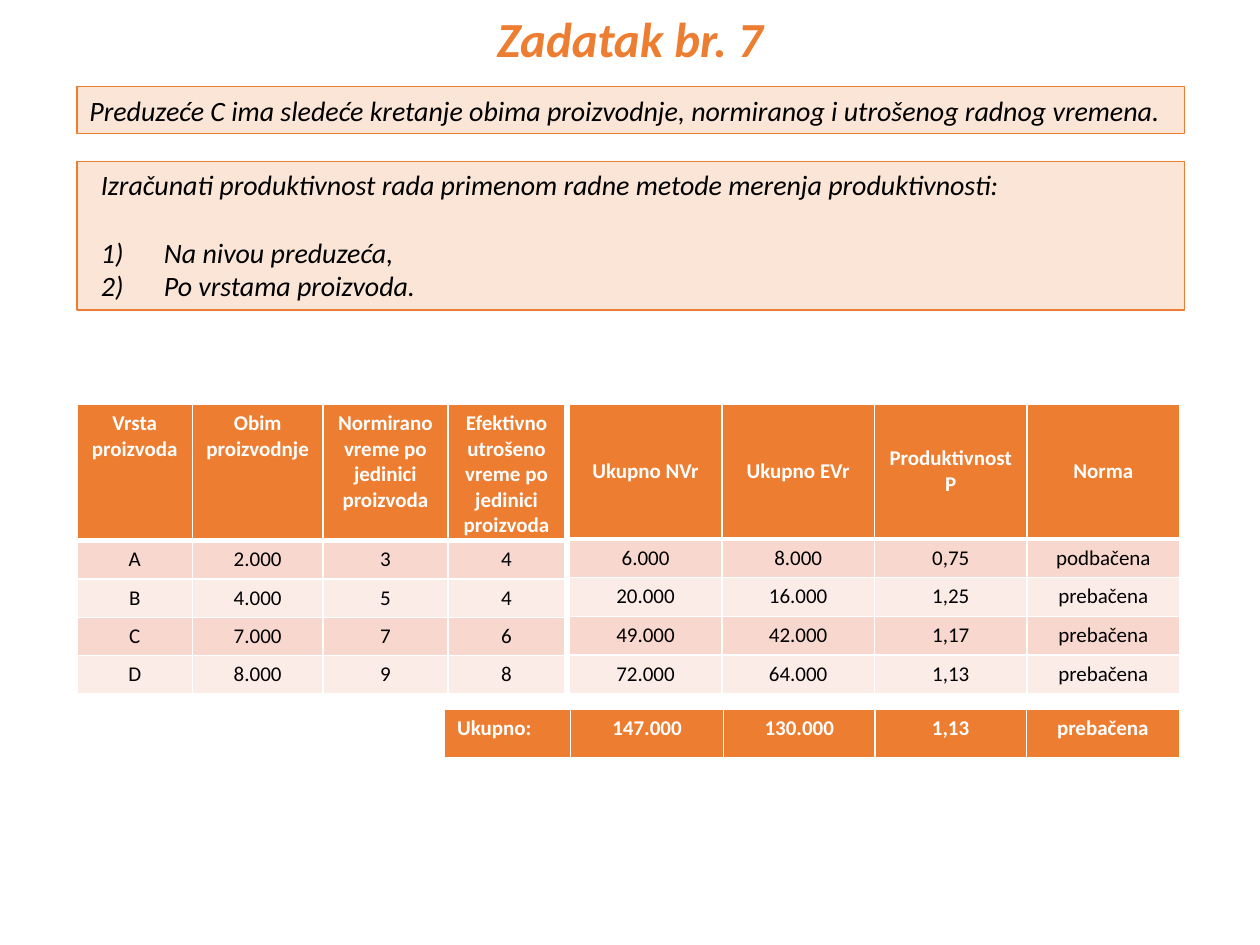
"""Build the productivity exercise slide: task text, data tables and totals."""
import pptx
import pptx.dml.color
import pptx.enum.text
import pptx.oxml.ns
import pptx.util
from lxml import etree

Pt = pptx.util.Pt
ALIGN = pptx.enum.text.PP_ALIGN
ANCHOR = pptx.enum.text.MSO_ANCHOR
RGB = pptx.dml.color.RGBColor
ORANGE = RGB(0xED, 0x7D, 0x31)
PEACH = RGB(0xFB, 0xE5, 0xD6)
BANDS = RGB(0xF8, 0xD7, 0xCE), RGB(0xFC, 0xEC, 0xE8)
WHITE = RGB(255, 255, 255)
BLACK = RGB(0, 0, 0)

TITLE = "Zadatak br. 7"
INTRO = "Preduzeće C ima sledeće kretanje obima proizvodnje, normiranog i utrošenog radnog vremena."
TASK = "Izračunati produktivnost rada primenom radne metode merenja produktivnosti:"
QUESTIONS = ["Na nivou preduzeća,", "Po vrstama proizvoda."]
GIVEN = [
    ("Vrsta proizvoda", "Obim proizvodnje", "Normirano vreme po jedinici proizvoda",
     "Efektivno utrošeno vreme po jedinici proizvoda"),
    ("A", "2.000", "3", "4"),
    ("B", "4.000", "5", "4"),
    ("C", "7.000", "7", "6"),
    ("D", "8.000", "9", "8"),
]
SOLUTION = [
    ("Ukupno NVr", "Ukupno EVr", "Produktivnost P", "Norma"),
    ("6.000", "8.000", "0,75", "podbačena"),
    ("20.000", "16.000", "1,25", "prebačena"),
    ("49.000", "42.000", "1,17", "prebačena"),
    ("72.000", "64.000", "1,13", "prebačena"),
]
TOTALS = [("Ukupno:", "147.000", "130.000", "1,13", "prebačena")]

LEFT, BOX_WIDTH = 44, 633
TABLE_TOP, TABLE_HEIGHT = 231, 165.6


def style(paragraph, size, color, align, bold=False, italic=False):
    paragraph.alignment = align
    paragraph.space_before = Pt(0)
    for run in paragraph.runs:
        font = run.font
        font.name, font.size, font.bold, font.italic = "Calibri", Pt(size), bold, italic
        font.color.rgb = color


def place(shape, left, top, width, height):
    shape.left, shape.top, shape.width, shape.height = map(Pt, (left, top, width, height))


def panel(shape):
    shape.fill.solid()
    shape.fill.fore_color.rgb = PEACH
    shape.line.color.rgb = ORANGE
    shape.line.width = Pt(0.75)
    shape.text_frame.word_wrap = True
    for paragraph in shape.text_frame.paragraphs:
        style(paragraph, 16, BLACK, ALIGN.JUSTIFY, italic=True)


def indent(paragraph, margin, first_line, bullet, **attributes):
    properties = paragraph._p.get_or_add_pPr()
    properties.set("marL", str(Pt(margin)))
    properties.set("indent", str(Pt(first_line)))
    etree.SubElement(properties, pptx.oxml.ns.qn(bullet), **attributes)


def border(cell, bottom_width):
    properties = cell._tc.get_or_add_tcPr()
    widths = {"a:lnL": 1, "a:lnR": 1, "a:lnT": 1, "a:lnB": bottom_width}
    for position, (side, width) in enumerate(widths.items()):
        line = etree.Element(pptx.oxml.ns.qn(side), w=str(Pt(width)))
        fill = etree.SubElement(line, pptx.oxml.ns.qn("a:solidFill"))
        etree.SubElement(fill, pptx.oxml.ns.qn("a:srgbClr"), val=str(WHITE))
        properties.insert(position, line)


def add_grid(slide, rows, left, top, widths, heights, header_anchor=ANCHOR.TOP):
    grid = slide.shapes.add_table(len(rows), len(widths), Pt(left), Pt(top),
                                  Pt(sum(widths)), Pt(sum(heights))).table
    for column, width in zip(grid.columns, widths):
        column.width = Pt(width)
    for r, (values, height) in enumerate(zip(rows, heights)):
        grid.rows[r].height = Pt(height)
        header = r == 0
        for c, value in enumerate(values):
            cell = grid.cell(r, c)
            cell.text_frame.text = value
            cell.vertical_anchor = header_anchor if header else ANCHOR.TOP
            if cell.vertical_anchor == ANCHOR.TOP:
                cell.margin_bottom = Pt(0)
            cell.fill.solid()
            cell.fill.fore_color.rgb = ORANGE if header else BANDS[(r - 1) % 2]
            align = ALIGN.LEFT if value == "Ukupno:" else ALIGN.CENTER
            style(cell.text_frame.paragraphs[0], 12, WHITE if header else BLACK, align, bold=header)
            border(cell, 3 if header else 1)


def row_heights(header):
    return [header] + [(TABLE_HEIGHT - header) / 4] * 4


def main():
    deck = pptx.Presentation()
    deck.slide_width, deck.slide_height = Pt(720), Pt(540)
    slide = deck.slides.add_slide(deck.slide_layouts[1])

    title = slide.shapes.title
    place(title, 276, 1, 168, 41)
    title.text_frame.text = TITLE
    title.text_frame.word_wrap = False
    style(title.text_frame.paragraphs[0], 28, ORANGE, ALIGN.CENTER, bold=True, italic=True)

    intro = slide.shapes.add_shape(pptx.enum.shapes.MSO_SHAPE.RECTANGLE,
                                   Pt(LEFT), Pt(49.5), Pt(BOX_WIDTH), Pt(26.7))
    intro.shadow.inherit = False
    intro.text_frame.text = INTRO
    panel(intro)

    task = slide.placeholders[1]
    place(task, LEFT, 92.2, BOX_WIDTH, 85)
    task.text_frame.text = "\n".join([TASK] + QUESTIONS)
    task.text_frame.auto_size = pptx.enum.text.MSO_AUTO_SIZE.NONE
    panel(task)
    lead, *questions = task.text_frame.paragraphs
    lead.space_after = Pt(19.5)
    indent(lead, 6.5, 0, "a:buNone")
    for question in questions:
        indent(question, 42.5, -36, "a:buAutoNum", type="arabicParenR")

    add_grid(slide, GIVEN, LEFT, TABLE_TOP, [66, 74.5, 71.5, 67], row_heights(78))
    add_grid(slide, SOLUTION, 325.3, TABLE_TOP, [87.2] * 4, row_heights(77), ANCHOR.MIDDLE)
    add_grid(slide, TOTALS, 254, 405, [72, 87.5, 86.5, 86.5, 87.5], [29])

    deck.save("out.pptx")


if __name__ == "__main__":
    main()
